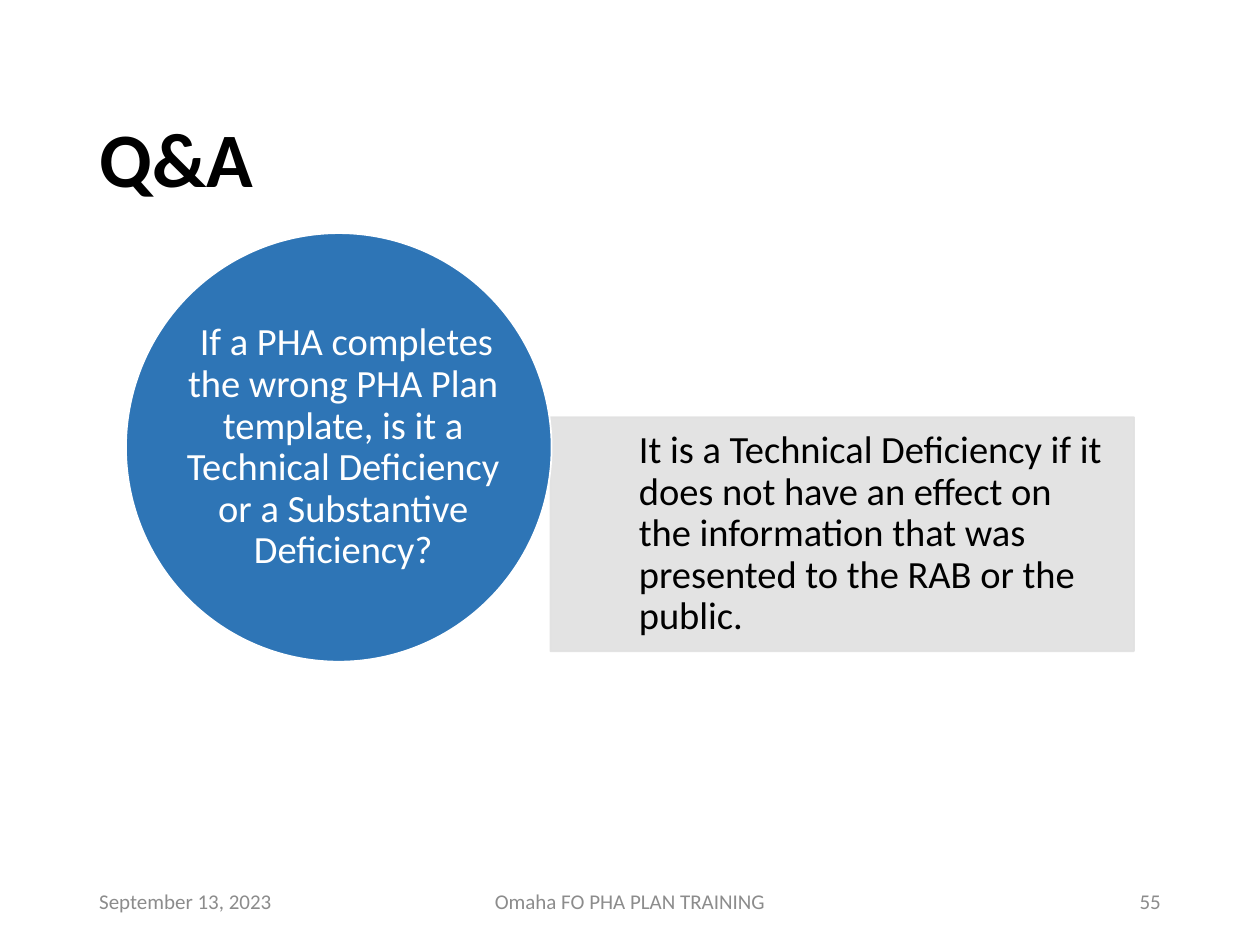
import pptx
import pptx.util
import pptx.dml.color
import pptx.enum.shapes
import pptx.enum.text
from pptx.oxml.xmlchemy import OxmlElement

Cm, Pt = pptx.util.Cm, pptx.util.Pt
Align = pptx.enum.text.PP_ALIGN
Kind = pptx.enum.shapes.MSO_SHAPE


def paint(color, value):
    """Set a font colour or a solid fill colour from a hex string."""
    color.rgb = pptx.dml.color.RGBColor.from_string(value)


def fade(fill, percent):
    """Make a solid fill partly transparent."""
    alpha = OxmlElement("a:alpha")
    alpha.set("val", str(percent * 1000))
    fill._xPr.find(".//" + pptx.oxml.ns.qn("a:srgbClr")).append(alpha)


def write(shape, text, size, color, align=Align.LEFT, bold=False, inset=None):
    """Put one formatted paragraph into a shape; inset is left, top, right, bottom."""
    frame = shape.text_frame
    frame.word_wrap = True
    frame.vertical_anchor = pptx.enum.text.MSO_ANCHOR.MIDDLE
    if inset:
        (frame.margin_left, frame.margin_top,
         frame.margin_right, frame.margin_bottom) = map(Cm, inset)
    para = frame.paragraphs[0]
    para.alignment = align
    run = para.add_run()
    run.text = text
    run.font.name = "Calibri"
    run.font.size = Pt(size)
    run.font.bold = bold
    paint(run.font.color, color)
    return para


def draw(slide, kind, box, fill, line):
    """Add a flat filled shape with a thin outline."""
    shape = slide.shapes.add_shape(kind, *map(Cm, box))
    shape.shadow.inherit = False
    shape.fill.solid()
    paint(shape.fill.fore_color, fill)
    paint(shape.line.color, line)
    shape.line.width = Pt(1)
    return shape


def head(slide, box, text):
    title = slide.shapes.title
    title.left, title.top, title.width, title.height = map(Cm, box)
    write(title, text, 44, "000000", bold=True).line_spacing = 0.9


def reply(slide, box, text):
    panel = draw(slide, Kind.RECTANGLE, box, "E1E1E1", "E1E1E1")
    fade(panel.fill, 90)
    fade(panel.line.fill, 90)
    para = write(panel, text, 22, "000000", inset=(1.78, 0.5, 0.5, 0.5))
    para.line_spacing = 0.9


def query(slide, box, text):
    draw(slide, Kind.OVAL, box, "2E75B6", "FFFFFF")
    # The label is wider than the text area of an oval
    label = slide.shapes.add_textbox(*map(Cm, box))
    para = write(label, text, 22, "FFFFFF", Align.CENTER, inset=(1, 1, 1, 1))
    para.line_spacing = 0.9
    props = para._p.get_or_add_pPr()
    props.set("marL", str(Cm(0.18)))
    props.set("indent", str(Cm(0.13)))


def foot(slide, box, date, name, page):
    left, top, width, height = box
    side, mid = 5.72, 8.58
    parts = (
        (left, side, date, Align.LEFT),
        (left + (width - mid) / 2, mid, name, Align.CENTER),
        (left + width - side, side, page, Align.RIGHT),
    )
    for x, wide, text, align in parts:
        area = slide.shapes.add_textbox(Cm(x), Cm(top), Cm(wide), Cm(height))
        write(area, text, 12, "8C8C8C", align)


def main():
    deck = pptx.Presentation()
    deck.slide_width, deck.slide_height = Cm(25.4), Cm(19.05)
    slide = deck.slides.add_slide(deck.slide_layouts[5])

    # Title and footer share the same side margins
    head(slide, (1.75, 1.88, 21.9, 2.79), "Q&A")
    foot(slide, (1.75, 17.65, 21.9, 1.02),
         "September 13, 2023", "Omaha FO PHA PLAN TRAINING", "55")

    # Answer panel, then the question circle over its edge
    reply(slide, (11.1, 8.41, 11.76, 4.72),
          "It is a Technical Deficiency if it does not have an effect on "
          "the information that was presented to the RAB or the public.")
    query(slide, (2.54, 4.7, 8.58, 8.64),
          "If a PHA completes the wrong PHA Plan template, is it a "
          "Technical Deficiency or a Substantive Deficiency?")

    deck.save("out.pptx")


if __name__ == "__main__":
    main()
